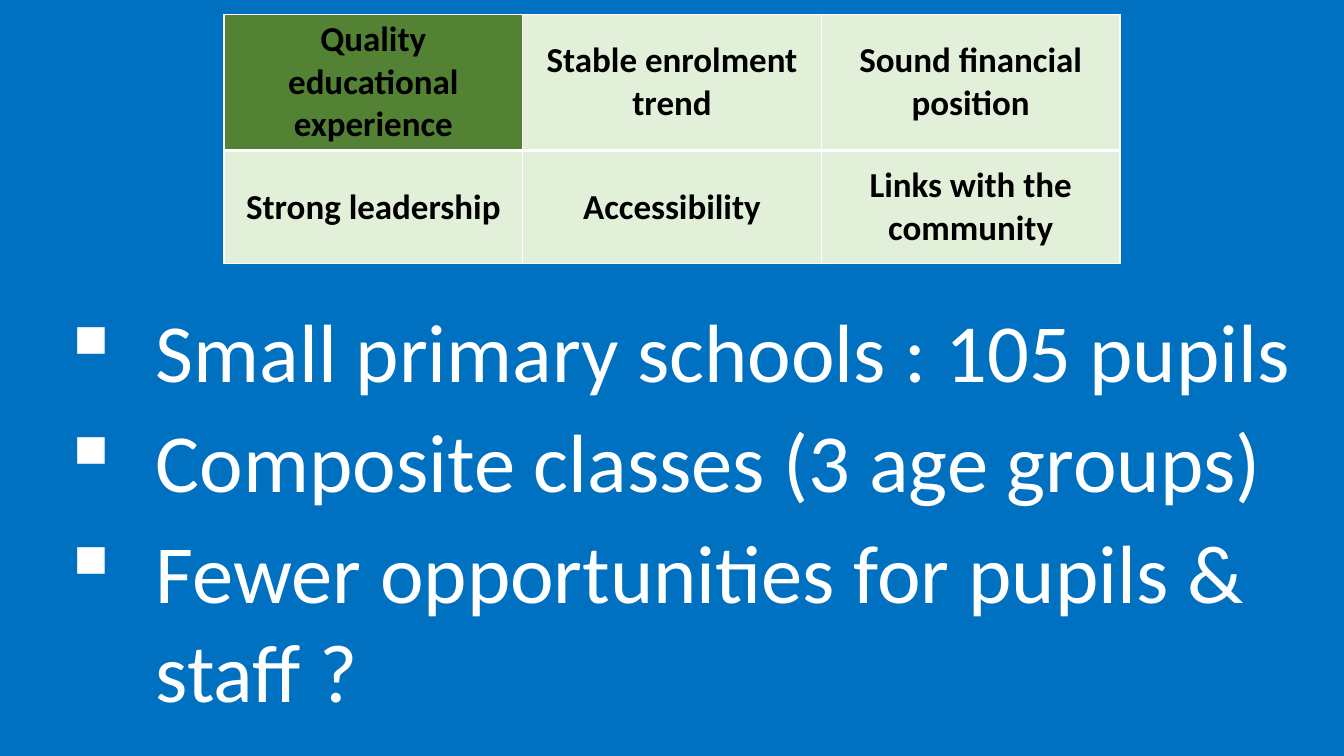
from dataclasses import dataclass

from lxml.etree import SubElement
from pptx import Presentation
from pptx.dml.color import RGBColor
from pptx.enum.text import MSO_ANCHOR, MSO_AUTO_SIZE, PP_ALIGN
from pptx.oxml.ns import qn
from pptx.slide import Slide
from pptx.table import _Cell
from pptx.text.text import _Paragraph
from pptx.util import Inches, Length, Pt

COLOURS = {
    "background": "0070C0",
    "current": "548235",
    "criterion": "E2F0D9",
    "dark": "000000",
    "light": "FFFFFF",
}
FONT = "Calibri"
SLIDE_WIDTH, SLIDE_HEIGHT = Inches(13.33), Inches(7.5)

# Shares of the slide's size
TABLE_LEFT, TABLE_TOP, TABLE_WIDTH, ROW_HEIGHT = 1 / 6, 0.019, 2 / 3, 0.15
POINT_LEFT, POINT_TOP, POINT_WIDTH, POINT_PITCH = 0.038, 0.39, 0.932, 0.146
LINE_HEIGHT = 0.133
BULLET_INDENT = Inches(0.94)
THIN, THICK = Pt(1), Pt(3)


@dataclass
class Criterion:
    text: str
    colour: str = "criterion"


@dataclass
class Point:
    text: str
    lines: int = 1


CRITERIA = [
    [
        Criterion("Quality educational experience", "current"),
        Criterion("Stable enrolment trend"),
        Criterion("Sound financial position"),
    ],
    [
        Criterion("Strong leadership"),
        Criterion("Accessibility"),
        Criterion("Links with the community"),
    ],
]
POINTS = [
    Point("Small primary schools : 105 pupils"),
    Point("Composite classes (3 age groups)"),
    Point("Fewer opportunities for pupils & staff ?", lines=2),
]


def across(share: float) -> Length:
    return Length(round(SLIDE_WIDTH * share))


def down(share: float) -> Length:
    return Length(round(SLIDE_HEIGHT * share))


def colour_of(name: str) -> RGBColor:
    return RGBColor.from_string(COLOURS[name])


def add_text(paragraph: _Paragraph, text: str, size: int, colour: str, bold: bool = False) -> None:
    run = paragraph.add_run()
    run.text = text
    run.font.name = FONT
    run.font.size = Pt(size)
    run.font.bold = bold
    run.font.color.rgb = colour_of(colour)


def set_borders(cell: _Cell, top: Length, bottom: Length) -> None:
    properties = cell._tc.get_or_add_tcPr()
    widths = {"a:lnL": THIN, "a:lnR": THIN, "a:lnT": top, "a:lnB": bottom}
    for tag, width in widths.items():
        line = SubElement(properties, qn(tag), w=str(int(width)))
        fill = SubElement(line, qn("a:solidFill"))
        SubElement(fill, qn("a:srgbClr"), val=COLOURS["light"])


def add_criteria(slide: Slide) -> None:
    row_count, column_count = len(CRITERIA), len(CRITERIA[0])
    table = slide.shapes.add_table(
        row_count, column_count, across(TABLE_LEFT), down(TABLE_TOP),
        across(TABLE_WIDTH), down(ROW_HEIGHT * row_count),
    ).table
    for row, criteria in enumerate(CRITERIA):
        for column, criterion in enumerate(criteria):
            cell = table.cell(row, column)
            cell.vertical_anchor = MSO_ANCHOR.MIDDLE
            cell.margin_left = cell.margin_right = Inches(0.08)
            cell.margin_top = cell.margin_bottom = Inches(0.04)
            # Borders come before the fill in the cell's properties
            set_borders(
                cell,
                top=THICK if row == 1 else THIN,
                bottom=THICK if row == 0 else THIN,
            )
            cell.fill.solid()
            cell.fill.fore_color.rgb = colour_of(criterion.colour)
            paragraph = cell.text_frame.paragraphs[0]
            paragraph.alignment = PP_ALIGN.CENTER
            add_text(paragraph, criterion.text, 25, "dark", bold=True)


def add_point(slide: Slide, point: Point, top: float) -> None:
    shape = slide.shapes.add_textbox(
        across(POINT_LEFT), down(top), across(POINT_WIDTH),
        down(POINT_PITCH + LINE_HEIGHT * (point.lines - 1)),
    )
    shape.text_frame.word_wrap = True
    shape.text_frame.auto_size = MSO_AUTO_SIZE.SHAPE_TO_FIT_TEXT
    paragraph = shape.text_frame.paragraphs[0]
    properties = paragraph._p.get_or_add_pPr()
    properties.set("marL", str(int(BULLET_INDENT)))
    properties.set("indent", str(-int(BULLET_INDENT)))
    SubElement(properties, qn("a:buChar"), char="▪")
    add_text(paragraph, point.text, 59, "light")


def main() -> None:
    presentation = Presentation()
    presentation.slide_width, presentation.slide_height = SLIDE_WIDTH, SLIDE_HEIGHT
    slide = presentation.slides.add_slide(presentation.slide_layouts[6])
    slide.background.fill.solid()
    slide.background.fill.fore_color.rgb = colour_of("background")

    # Table of criteria
    add_criteria(slide)

    # Bulleted points
    for index, point in enumerate(POINTS):
        add_point(slide, point, POINT_TOP + POINT_PITCH * index)

    presentation.save("out.pptx")


if __name__ == "__main__":
    main()
